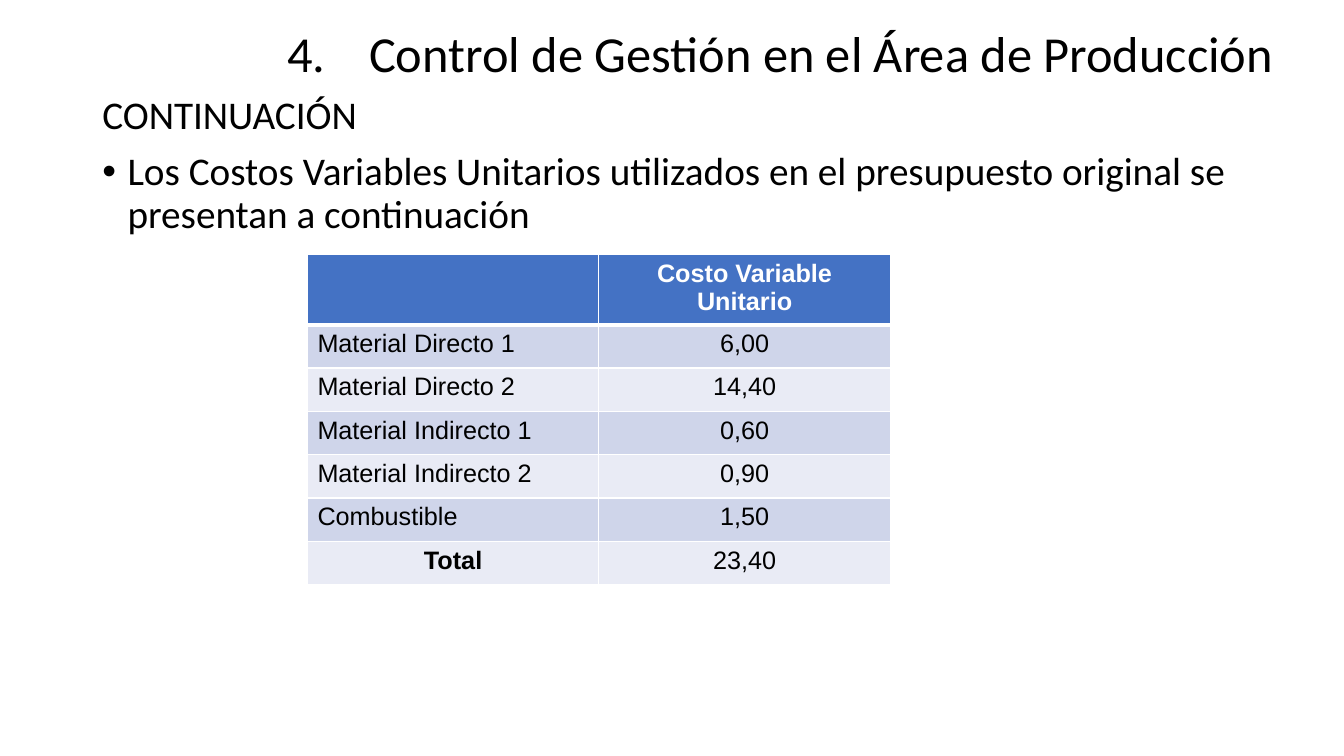
from dataclasses import dataclass

from lxml.etree import SubElement
from pptx import Presentation
from pptx.dml.color import RGBColor
from pptx.enum.text import MSO_ANCHOR, PP_ALIGN
from pptx.oxml.ns import qn
from pptx.util import Inches, Pt


@dataclass(frozen=True)
class Theme:
    ink: str = "000000"
    paper: str = "FFFFFF"
    header: str = "4472C4"
    bands: tuple = ("CFD5EA", "E9EBF5")
    text_font: str = "Calibri"
    table_font: str = "Arial"
    title_size: int = 36
    body_size: int = 28
    table_size: int = 18
    border: int = 1
    header_border: int = 3


class SlideBuilder:
    COLUMNS, ROWS = 160, 90

    def __init__(self, deck, theme):
        self.theme = theme
        self.column = deck.slide_width / self.COLUMNS
        self.row = deck.slide_height / self.ROWS
        self.slide = deck.slides.add_slide(deck.slide_layouts[6])
        background = self.slide.background.fill
        background.solid()
        background.fore_color.rgb = RGBColor.from_string(theme.paper)

    def area(self, left, top, width, height):
        return (round(left * self.column), round(top * self.row),
                round(width * self.column), round(height * self.row))

    def frame(self, area, anchor):
        frame = self.slide.shapes.add_textbox(*self.area(*area)).text_frame
        frame.word_wrap = True
        frame.vertical_anchor = anchor
        return frame

    def add_text(self, paragraph, text, font, size, color, bold=False):
        run = paragraph.add_run()
        run.text = text
        run.font.name = font
        run.font.size = Pt(size)
        run.font.bold = bold
        run.font.color.rgb = RGBColor.from_string(color)

    def mark(self, paragraph, indent, tag, **attributes):
        properties = paragraph._p.get_or_add_pPr()
        properties.set("marL", str(Inches(indent)))
        properties.set("indent", str(-Inches(indent)))
        SubElement(properties, qn("a:buFont"), typeface="Arial" if tag == "a:buChar" else "+mj-lt")
        SubElement(properties, qn(tag), **attributes)

    def title(self, text, number, area):
        paragraph = self.frame(area, MSO_ANCHOR.MIDDLE).paragraphs[0]
        self.mark(paragraph, 0.81, "a:buAutoNum", type="arabicPeriod", startAt=str(number))
        paragraph.alignment = PP_ALIGN.RIGHT
        paragraph.line_spacing = 0.9
        self.add_text(paragraph, text, self.theme.text_font, self.theme.title_size, self.theme.ink)

    def body(self, heading, bullets, area):
        frame = self.frame(area, MSO_ANCHOR.TOP)
        for index, text in enumerate([heading, *bullets]):
            paragraph = frame.add_paragraph() if index else frame.paragraphs[0]
            if index:
                self.mark(paragraph, 0.25, "a:buChar", char="•")
                paragraph.space_before = Pt(10)
            paragraph.line_spacing = 0.9
            self.add_text(paragraph, text, self.theme.text_font, self.theme.body_size, self.theme.ink)

    def border(self, cell, side, width):
        line = SubElement(cell._tc.get_or_add_tcPr(), qn(f"a:ln{side}"), w=str(Pt(width)))
        fill = SubElement(line, qn("a:solidFill"))
        SubElement(fill, qn("a:srgbClr"), val=self.theme.paper)

    def cell(self, cell, text, row, centred, bold):
        theme = self.theme
        heavy_side = {0: "B", 1: "T"}.get(row)
        for side in "LRTB":
            self.border(cell, side, theme.header_border if side == heavy_side else theme.border)
        cell.fill.solid()
        fill = theme.bands[(row - 1) % 2] if row else theme.header
        cell.fill.fore_color.rgb = RGBColor.from_string(fill)
        paragraph = cell.text_frame.paragraphs[0]
        paragraph.alignment = PP_ALIGN.CENTER if centred else PP_ALIGN.LEFT
        if text:
            color = theme.ink if row else theme.paper
            self.add_text(paragraph, text, theme.table_font, theme.table_size, color, bold)

    def table(self, records, left, top, column_width, row_height):
        area = self.area(left, top, column_width * len(records[0]), row_height * len(records))
        table = self.slide.shapes.add_table(len(records), len(records[0]), *area).table
        last = len(records) - 1
        for row, record in enumerate(records):
            table.rows[row].height = round(row_height * self.row)
            for column, text in enumerate(record):
                centred = column > 0 or row == last
                bold = row == 0 or (row == last and column == 0)
                self.cell(table.cell(row, column), text, row, centred, bold)


def main():
    deck = Presentation()
    deck.slide_width, deck.slide_height = Inches(13.33), Inches(7.5)
    costs = SlideBuilder(deck, Theme())
    costs.title("Control de Gestión en el Área de Producción", 4, (9.5, 0, 143.3, 13.5))
    costs.body(
        "CONTINUACIÓN",
        ["Los Costos Variables Unitarios utilizados en el presupuesto original "
         "se presentan a continuación"],
        (11, 10.8, 138, 79.2),
    )
    costs.table(
        [
            ("", "Costo Variable Unitario"),
            ("Material Directo 1", "6,00"),
            ("Material Directo 2", "14,40"),
            ("Material Indirecto 1", "0,60"),
            ("Material Indirecto 2", "0,90"),
            ("Combustible", "1,50"),
            ("Total", "23,40"),
        ],
        left=36.6, top=30.25, column_width=34.7, row_height=5.16,
    )
    deck.save("out.pptx")


if __name__ == "__main__":
    main()
